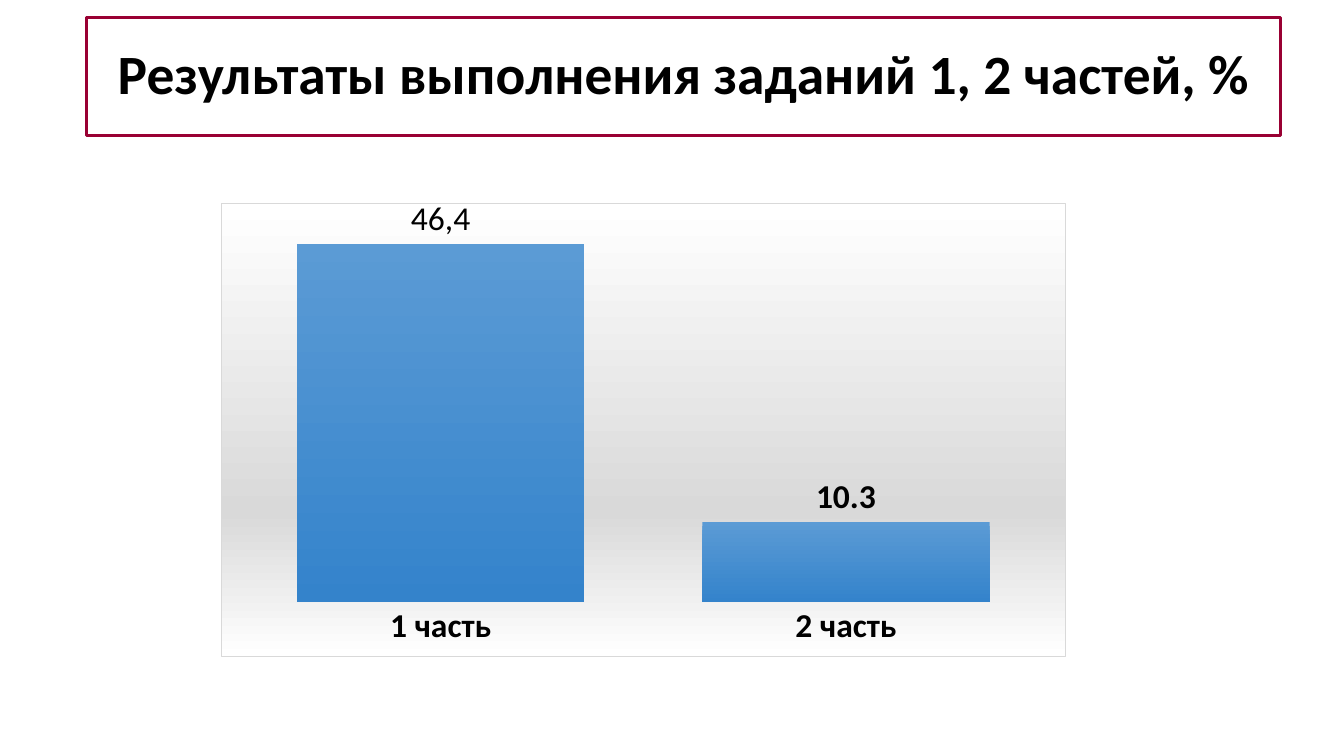
from lxml.etree import SubElement
from pptx import Presentation
from pptx.chart.data import CategoryChartData
from pptx.dml.color import RGBColor
from pptx.enum.chart import XL_CHART_TYPE as ChartType
from pptx.enum.chart import XL_LABEL_POSITION as LabelPosition
from pptx.enum.chart import XL_TICK_MARK as TickMark
from pptx.enum.text import MSO_ANCHOR as Anchor
from pptx.enum.text import PP_ALIGN as Align
from pptx.oxml import parse_xml
from pptx.oxml.ns import nsdecls, qn
from pptx.util import Cm, Pt

BLACK = RGBColor(0x00, 0x00, 0x00)
WHITE = RGBColor(0xFF, 0xFF, 0xFF)
GREY = RGBColor(0xD9, 0xD9, 0xD9)
LIGHT_BLUE = RGBColor(0x5B, 0x9B, 0xD5)
BLUE = RGBColor(0x34, 0x83, 0xCB)
CRIMSON = RGBColor(0x99, 0x00, 0x33)
FONT = "Calibri"


def format_font(font, size, bold=True):
    font.name = FONT
    font.size = Pt(size)
    font.bold = bold
    font.color.rgb = BLACK


def gradient_properties(stops, border=""):
    stop_xml = "".join(
        f'<a:gs pos="{percent * 1000}"><a:srgbClr val="{color}"/></a:gs>'
        for percent, color in stops
    )
    return parse_xml(
        f'<c:spPr {nsdecls("c", "a")}><a:gradFill rotWithShape="1">'
        f'<a:gsLst>{stop_xml}</a:gsLst><a:lin ang="5400000" scaled="0"/>'
        f"</a:gradFill>{border}</c:spPr>"
    )


def format_title(title, text):
    title.left, title.top = Cm(2.19), Cm(0.44)
    title.width, title.height = Cm(30.08), Cm(2.98)
    title.line.color.rgb = CRIMSON
    title.line.width = Pt(2.25)
    frame = title.text_frame
    frame.word_wrap = True
    frame.vertical_anchor = Anchor.MIDDLE
    paragraph = frame.paragraphs[0]
    paragraph.alignment = Align.CENTER
    paragraph.line_spacing = 0.9
    run = paragraph.add_run()
    run.text = text
    format_font(run.font, 39.6)


def set_plot_layout(chart, **fractions):
    plot_area = chart._chartSpace.find(qn("c:chart")).find(qn("c:plotArea"))
    for layout in plot_area.findall(qn("c:layout")):
        plot_area.remove(layout)
    layout = parse_xml(f'<c:layout {nsdecls("c")}/>')
    plot_area.insert(0, layout)
    manual = SubElement(layout, qn("c:manualLayout"))
    SubElement(manual, qn("c:layoutTarget")).set("val", "inner")
    for mode in ("xMode", "yMode"):
        SubElement(manual, qn(f"c:{mode}")).set("val", "edge")
    for side, fraction in fractions.items():
        SubElement(manual, qn(f"c:{side}")).set("val", str(fraction))


def format_axes(chart):
    category_axis = chart.category_axis
    category_axis.major_tick_mark = TickMark.NONE
    category_axis.format.line.fill.background()
    format_font(category_axis.tick_labels.font, 24)
    value_axis = chart.value_axis
    value_axis.minimum_scale, value_axis.maximum_scale = 0, 50
    value_axis.has_major_gridlines = False
    value_axis.visible = False


def format_labels(series, first_text):
    labels = series.data_labels
    labels.show_value = True
    labels.position = LabelPosition.OUTSIDE_END
    format_font(labels.font, 24)
    first_label = series.points[0].data_label
    run = first_label.text_frame.paragraphs[0].add_run()
    run.text = first_text
    format_font(run.font, 24, bold=False)
    first_label.position = LabelPosition.OUTSIDE_END


def add_column_chart(slide):
    data = CategoryChartData()
    data.categories = ["1 часть", "2 часть"]
    data.add_series("Series 1", [46, 10.3])
    chart = slide.shapes.add_chart(
        ChartType.COLUMN_CLUSTERED, Cm(5.56), Cm(5.03), Cm(21.31), Cm(11.53), data
    ).chart
    chart.has_legend = False
    chart.has_title = False
    format_font(chart.font, 24)
    format_axes(chart)
    set_plot_layout(chart, x=0.02, y=0.02, w=0.96, h=0.86)
    plot = chart.plots[0]
    plot.gap_width = 41
    plot.vary_by_categories = False
    series = plot.series[0]
    format_labels(series, "46,4")
    border = (
        f'<a:ln w="{Pt(0.75)}"><a:solidFill><a:srgbClr val="{GREY}"/>'
        "</a:solidFill></a:ln>"
    )
    background = gradient_properties([(0, WHITE), (68, GREY), (100, WHITE)], border)
    chart._chartSpace.find(qn("c:chart")).addnext(background)
    columns = gradient_properties([(0, LIGHT_BLUE), (100, BLUE)])
    series._element.find(qn("c:tx")).addnext(columns)


def main():
    presentation = Presentation()
    presentation.slide_width, presentation.slide_height = Cm(33.87), Cm(19.05)
    slide = presentation.slides.add_slide(presentation.slide_layouts[5])
    add_column_chart(slide)
    format_title(slide.shapes.title, "Результаты выполнения заданий 1, 2 частей, %")
    presentation.save("out.pptx")


if __name__ == "__main__":
    main()
